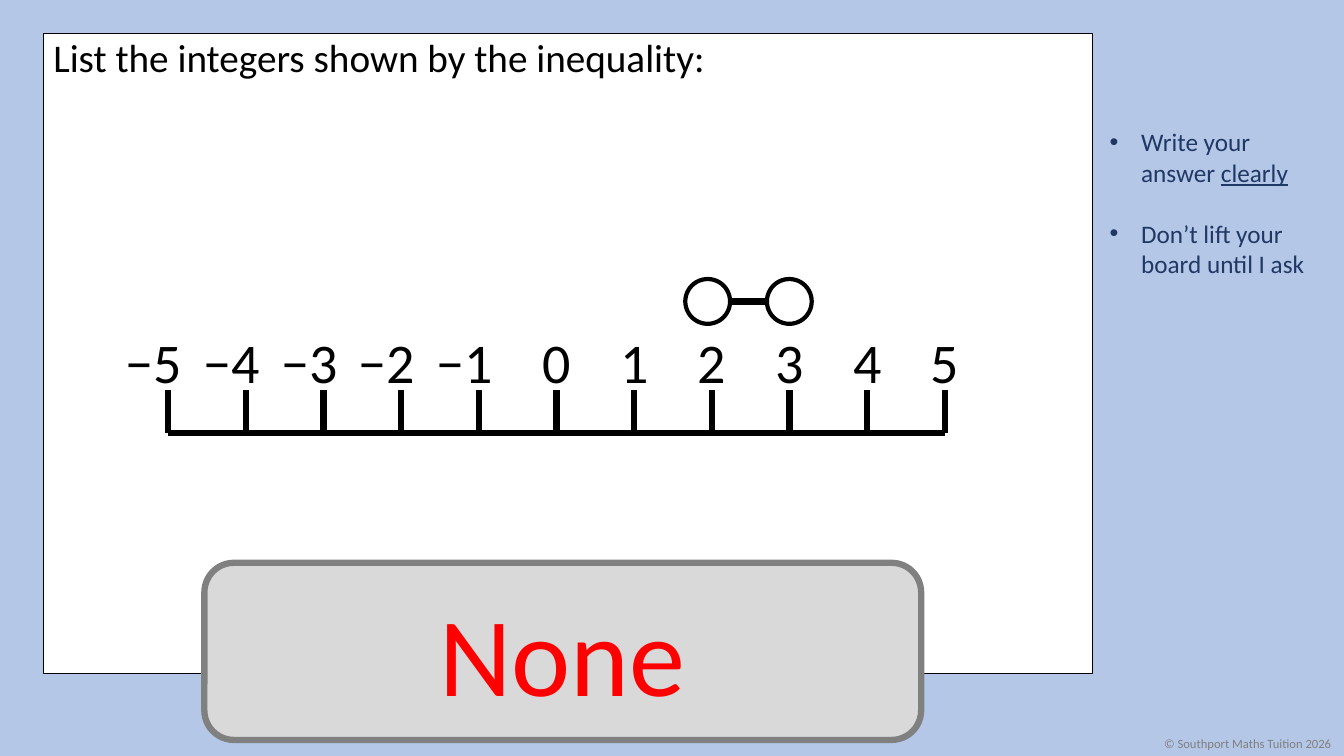
from dataclasses import dataclass

from lxml import etree
from pptx import Presentation
from pptx import util as u
from pptx.dml import color
from pptx.enum import shapes, text
from pptx.oxml import ns

QUESTION = "List the integers shown by the inequality:"
REMINDERS = [
    [("Write your answer ", False), ("clearly", True)],
    [("Don’t lift your board until I ask", False)],
]
COPYRIGHT = "© Southport Maths Tuition 2026"
ANSWER = "None"
NUMBERS = range(-5, 6)
OPEN_ENDS = (2, 3)


@dataclass(frozen=True)
class Theme:
    font: str = "Calibri"
    background: str = "B4C7E7"
    board: str = "FFFFFF"
    ink: str = "000000"
    reminder: str = "203864"
    muted: str = "808080"
    answer_fill: str = "D9D9D9"
    answer: str = "FF0000"
    question_size: int = 28
    reminder_size: int = 18
    copyright_size: int = 9
    number_size: int = 40
    answer_size: int = 80


THEME = Theme()
BOARD = (31, 24, 749.5, 457)
AXIS_LEFT, AXIS_Y, STEP, TICK_HEIGHT = 120, 309.5, 55.5, 31
LABEL_TOP, LABEL_HEIGHT, MINUS_SHIFT = 230.4, 55.4, 10
RANGE_Y, CIRCLE = 215.3, 32
CIRCLE_CENTRES = {2: 505.5, 3: 563.8}

presentation = Presentation()
presentation.slide_width, presentation.slide_height = u.Pt(960), u.Pt(540)
slide = presentation.slides.add_slide(presentation.slide_layouts[6])


def rgb(value):
    return color.RGBColor.from_string(value)


def style_run(run, size, ink):
    run.font.name = THEME.font
    run.font.size = u.Pt(size)
    run.font.color.rgb = rgb(ink)


def add_shape(kind, box, fill, line, weight):
    shape = slide.shapes.add_shape(kind, *map(u.Pt, box))
    shape.shadow.inherit = False
    shape.fill.solid()
    shape.fill.fore_color.rgb = rgb(fill)
    shape.line.color.rgb = rgb(line)
    shape.line.width = u.Pt(weight)
    return shape


def add_text(words, box, size, ink, align=text.PP_ALIGN.LEFT, wrap=False):
    frame = slide.shapes.add_textbox(*map(u.Pt, box)).text_frame
    frame.word_wrap = wrap
    paragraph = frame.paragraphs[0]
    paragraph.text = words
    paragraph.alignment = align
    style_run(paragraph.runs[0], size, ink)
    return paragraph


def add_line(x1, y1, x2, y2):
    line = slide.shapes.add_connector(
        shapes.MSO_CONNECTOR.STRAIGHT, *map(u.Pt, (x1, y1, x2, y2)))
    line.line.color.rgb = rgb(THEME.ink)
    line.line.width = u.Pt(4.5)
    etree.SubElement(line._element.spPr, ns.qn("a:effectLst"))


def add_bullet(paragraph):
    properties = paragraph._p.get_or_add_pPr()
    properties.set("marL", str(u.Pt(22.5)))
    properties.set("indent", str(u.Pt(-22.5)))
    etree.SubElement(properties, ns.qn("a:buFont"), typeface="Arial")
    etree.SubElement(properties, ns.qn("a:buChar"), char="•")


def add_reminders():
    frame = slide.shapes.add_textbox(*map(u.Pt, (785.5, 87, 167, 116.6))).text_frame
    frame.word_wrap = True
    for index, pieces in enumerate(REMINDERS):
        paragraph = frame.add_paragraph() if index else frame.paragraphs[0]
        add_bullet(paragraph)
        if index:
            paragraph.space_before = u.Pt(22)
        for words, underlined in pieces:
            run = paragraph.add_run()
            run.text = words
            style_run(run, THEME.reminder_size, THEME.reminder)
            run.font.underline = underlined


def add_number_line():
    add_line(AXIS_LEFT, AXIS_Y, AXIS_LEFT + STEP * (len(NUMBERS) - 1), AXIS_Y)
    for index, number in enumerate(NUMBERS):
        x = AXIS_LEFT + STEP * index
        add_line(x, AXIS_Y - TICK_HEIGHT, x, AXIS_Y)
        width = 55 if number < 0 else 35
        centre = x - MINUS_SHIFT if number < 0 else x
        add_text(str(number).replace("-", "−"),
                 (centre - width / 2, LABEL_TOP, width, LABEL_HEIGHT),
                 THEME.number_size, THEME.ink, text.PP_ALIGN.CENTER)


def add_range():
    start, end = (CIRCLE_CENTRES[number] for number in OPEN_ENDS)
    add_line(start, RANGE_Y, end, RANGE_Y)
    for centre in (start, end):
        add_shape(shapes.MSO_SHAPE.OVAL,
                  (centre - CIRCLE / 2, RANGE_Y - CIRCLE / 2, CIRCLE, CIRCLE),
                  THEME.board, THEME.ink, 3)


def add_answer():
    card = add_shape(shapes.MSO_SHAPE.ROUNDED_RECTANGLE, (146, 402, 512, 126.5),
                     THEME.answer_fill, THEME.muted, 4.5)
    frame = card.text_frame
    frame.margin_left = frame.margin_right = u.Pt(8)
    frame.vertical_anchor = text.MSO_ANCHOR.MIDDLE
    paragraph = frame.paragraphs[0]
    paragraph.text = ANSWER
    paragraph.alignment = text.PP_ALIGN.CENTER
    style_run(paragraph.runs[0], THEME.answer_size, THEME.answer)


slide.background.fill.solid()
slide.background.fill.fore_color.rgb = rgb(THEME.background)
add_shape(shapes.MSO_SHAPE.RECTANGLE, BOARD, THEME.board, THEME.ink, 1)
add_reminders()
add_text(COPYRIGHT, (824.5, 522, 135.5, 18), THEME.copyright_size, THEME.muted)
question = add_text(QUESTION, BOARD, THEME.question_size, THEME.ink, wrap=True)
question.line_spacing = 0.9
add_number_line()
add_range()
add_answer()
presentation.save("out.pptx")
